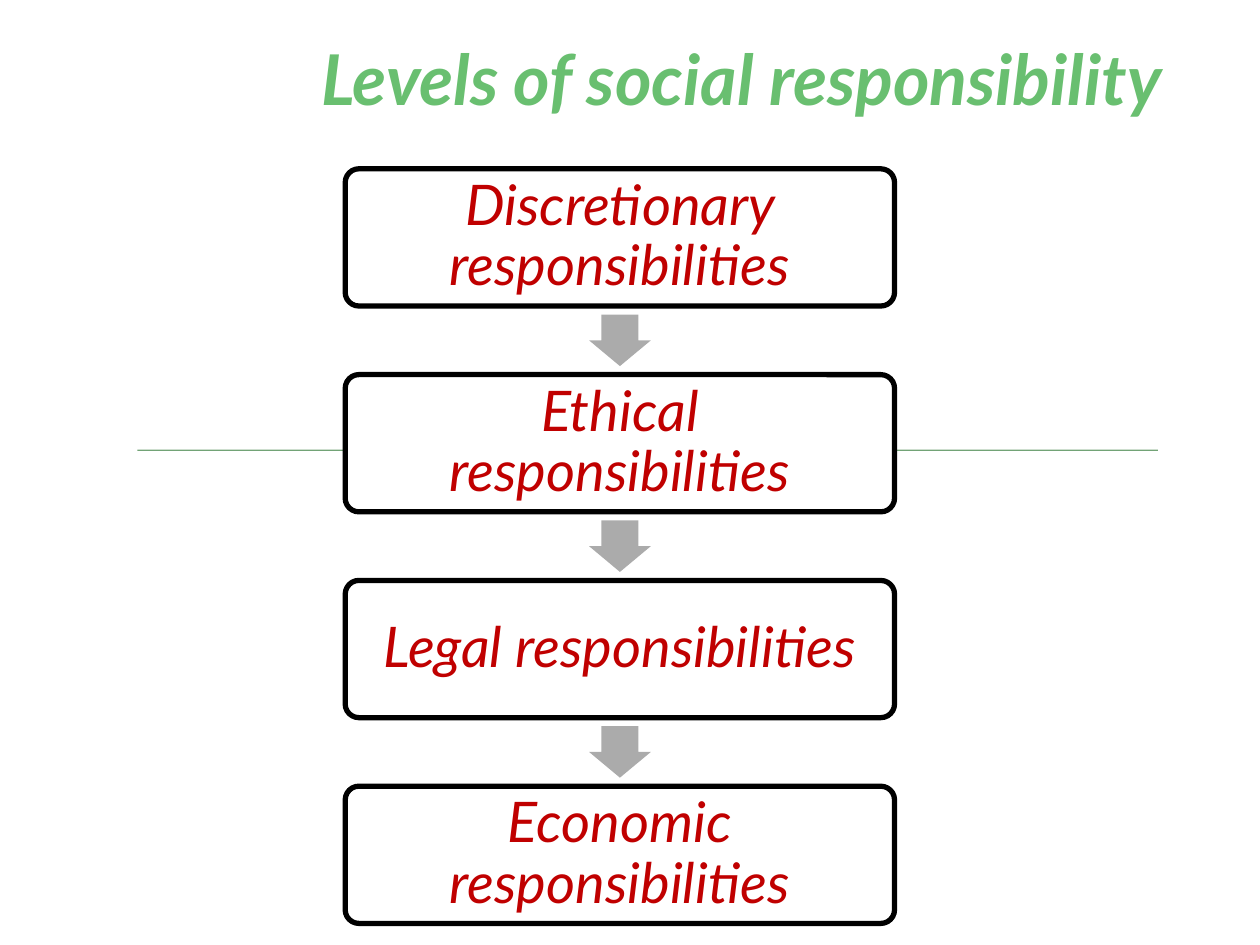
from pptx import Presentation
from pptx.dml.color import RGBColor
from pptx.enum.shapes import MSO_SHAPE
from pptx.enum.text import MSO_ANCHOR, PP_ALIGN
from pptx.util import Pt

LEVELS = ["Discretionary", "Ethical", "Legal", "Economic"]


def color(value):
    return RGBColor.from_string(value)


def add_block(slide, kind, box, fill, line=None):
    shape = slide.shapes.add_shape(kind, *map(Pt, box))
    shape.shadow.inherit = False
    shape.fill.solid()
    shape.fill.fore_color.rgb = color(fill)
    if line:
        shape.line.color.rgb = color(line)
        shape.line.width = Pt(3)
    else:
        shape.line.fill.background()
    return shape


def write(shape, text, size, hue, align, anchor, insets, bold=False):
    """Set one italic paragraph; insets are left, top, right, bottom."""
    frame = shape.text_frame
    frame.word_wrap = True
    frame.vertical_anchor = anchor
    for side, inset in zip(("left", "top", "right", "bottom"), insets):
        setattr(frame, f"margin_{side}", Pt(inset))
    par = frame.paragraphs[0]
    par.alignment = align
    run = par.add_run()
    run.text = text
    looks = {"name": "Lato", "size": Pt(size), "bold": bold, "italic": True}
    for name, value in looks.items():
        setattr(run.font, name, value)
    run.font.color.rgb = color(hue)
    return par


def add_title(slide, box):
    title = slide.shapes.add_textbox(*map(Pt, box))
    write(title, "Levels of social responsibility", 40, "69BF70",
          PP_ALIGN.RIGHT, MSO_ANCHOR.BOTTOM, (7.2, 3.6, 7.9, 3.6), bold=True)


def add_flow(slide, box):
    """Stack the levels in the box, with an arrow in each gap."""
    left, top, width, height = box
    # Each gap is half as high as a level.
    tall = height / (len(LEVELS) + (len(LEVELS) - 1) / 2)
    gap = tall / 2
    wide, high = 35.3, 29.4
    for i, level in enumerate(LEVELS):
        y = top + i * (tall + gap)
        if i:
            arrow = add_block(slide, MSO_SHAPE.DOWN_ARROW,
                              (left + (width - wide) / 2,
                               y - (gap + high) / 2, wide, high), "ABABAB")
            arrow.adjustments[0] = 0.6
            arrow.adjustments[1] = 0.5
        card = add_block(slide, MSO_SHAPE.ROUNDED_RECTANGLE,
                         (left, y, width, tall), "FFFFFF", "000000")
        card.adjustments[0] = 0.1
        par = write(card, f"{level} responsibilities", 32, "C00000",
                    PP_ALIGN.CENTER, MSO_ANCHOR.MIDDLE, (9.3,) * 4)
        par.line_spacing = 0.9


def main():
    deck = Presentation()
    deck.slide_width, deck.slide_height = Pt(720), Pt(540)
    slide = deck.slides.add_slide(deck.slide_layouts[6])
    add_block(slide, MSO_SHAPE.RECTANGLE, (78.5, 257, 583.2, 0.72), "72A376")
    add_title(slide, (59.8, 15.1, 612, 56.9))
    add_flow(slide, (197.3, 96.5, 313.9, 431.2))
    deck.save("out.pptx")


if __name__ == "__main__":
    main()
